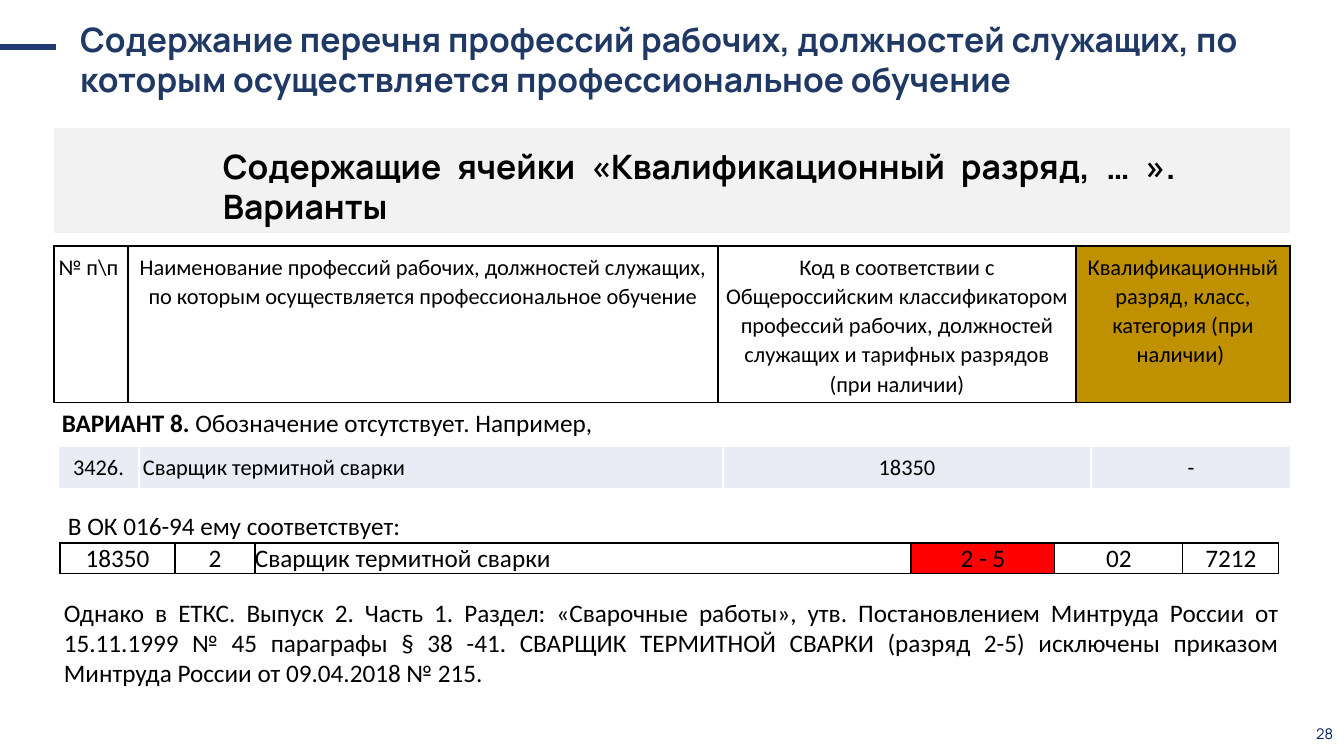
from dataclasses import dataclass

from lxml.etree import SubElement
from pptx import Presentation
from pptx.dml.color import RGBColor as RGB
from pptx.enum.shapes import MSO_CONNECTOR as CONN, MSO_SHAPE as SHAPE
from pptx.enum.text import MSO_ANCHOR as ANCHOR, MSO_AUTO_SIZE as AUTO, PP_ALIGN as AL
from pptx.oxml.ns import qn
from pptx.util import Emu, Pt


@dataclass(frozen=True)
class Theme:
    black: str = "000000"
    white: str = "FFFFFF"
    navy: str = "203864"
    number: str = "002060"
    accent: str = "213A75"
    band: str = "F2F2F2"
    gold: str = "BF9000"
    pale: str = "E9EBF5"
    red: str = "FF0000"
    head_font: str = "Manrope"
    body_font: str = "Calibri"
    head: float = 24
    body: float = 18
    cell: float = 16
    small: float = 10.5


T = Theme()

TITLE = ("Содержание перечня профессий рабочих, должностей служащих, "
         "по которым осуществляется профессиональное обучение")
SUBTITLE = "Содержащие ячейки «Квалификационный разряд, … ». Варианты"
PAGE = "28"
NOTES = [
    ((52, 387, 1235, 104), 1.5, 8,
     [("ВАРИАНТ 8.", True), (" Обозначение отсутствует. Например,", False)]),
    ((58, 490, 1233, 51), 1.5, 8, [("В ОК 016-94 ему соответствует:", False)]),
    ((54, 592, 1235, 102), 1, 0,
     [("Однако в ЕТКС. Выпуск 2. Часть 1. Раздел: «Сварочные работы», утв. "
       "Постановлением Минтруда России от 15.11.1999 № 45 параграфы § 38 -41. "
       "СВАРЩИК ТЕРМИТНОЙ СВАРКИ (разряд 2-5) исключены приказом "
       "Минтруда России от 09.04.2018 № 215. ", False)]),
]

PADDED = dict(size=T.cell, pad=(4, 7), spacing=1.06, after=8)
TIGHT = dict(size=T.body, pad=(0, 0), spacing=1, after=0)
TABLES = [
    dict(at=(54, 246), height=155, border=T.black, style=PADDED, cells=[
        (74, "№ п\\п ", AL.CENTER, None),
        (590, "Наименование профессий рабочих, должностей служащих, "
              "по которым осуществляется профессиональное обучение", AL.CENTER, None),
        (358, "Код в соответствии с Общероссийским классификатором профессий рабочих, "
              "должностей служащих и тарифных разрядов (при наличии)", AL.CENTER, None),
        (214, "Квалификационный разряд, класс, категория (при наличии) ", AL.CENTER, T.gold)]),
    dict(at=(58, 446), height=42, border=T.white, style=PADDED, cells=[
        (81, "3426.", AL.CENTER, T.pale),
        (584, "Сварщик термитной сварки", AL.LEFT, T.pale),
        (368, "18350", AL.CENTER, T.pale),
        (200, "-", AL.CENTER, T.pale)]),
    dict(at=(60, 543), height=30, border=T.black, style=TIGHT, cells=[
        (115, "18350", AL.CENTER, None),
        (80, "2", AL.CENTER, None),
        (656, "Сварщик термитной сварки", AL.LEFT, None),
        (144, "2 - 5", AL.CENTER, T.red),
        (128, "02", AL.CENTER, None),
        (96, "7212", AL.CENTER, None)]),
]


def px(n):
    return Emu(round(n * 914400 / 100.8))


def place(s, box):
    s.left, s.top, s.width, s.height = map(px, box)


def write(tf, runs, size, color=T.black, font=T.body_font, align=AL.LEFT, spacing=1, after=0):
    p = tf.paragraphs[0]
    p.alignment, p.line_spacing = align, spacing
    p.space_before, p.space_after = Pt(0), Pt(after)
    for text, bold in runs:
        r = p.add_run()
        r.text = text
        f = r.font
        f.name, f.size, f.bold = font, Pt(size), bold
        f.color.rgb = RGB.from_string(color)


def add_text(slide, box, runs, size, anchor=ANCHOR.TOP, **look):
    tf = slide.shapes.add_textbox(*map(px, box)).text_frame
    tf.word_wrap = True
    tf.vertical_anchor = anchor
    write(tf, runs, size, **look)


def add_borders(cell, color):
    tc_pr = cell._tc.get_or_add_tcPr()
    for side in ("lnL", "lnR", "lnT", "lnB"):
        ln = SubElement(tc_pr, qn(f"a:{side}"), w=str(Pt(1)))
        fill = SubElement(ln, qn("a:solidFill"))
        SubElement(fill, qn("a:srgbClr"), val=color)


def add_row_table(slide, at, height, border, style, cells):
    width = sum(c[0] for c in cells)
    box = (*at, width, height)
    table = slide.shapes.add_table(1, len(cells), *map(px, box)).table
    table.first_row = table.horz_banding = False
    for i, (col_width, text, align, fill) in enumerate(cells):
        table.columns[i].width = px(col_width)
        cell = table.cell(0, i)
        side, edge = map(px, style["pad"])
        cell.margin_left = cell.margin_right = side
        cell.margin_top = cell.margin_bottom = edge
        add_borders(cell, border)
        if fill:
            cell.fill.solid()
            cell.fill.fore_color.rgb = RGB.from_string(fill)
        else:
            cell.fill.background()
        write(cell.text_frame, [(text, False)], style["size"], align=align,
              spacing=style["spacing"], after=style["after"])


def main():
    prs = Presentation()
    prs.slide_width, prs.slide_height = px(1344), px(756)
    slide = prs.slides.add_slide(prs.slide_layouts[5])

    band = slide.shapes.add_shape(SHAPE.RECTANGLE, *map(px, (54, 128, 1236, 105)))
    band.shadow.inherit = False
    band.fill.solid()
    band.fill.fore_color.rgb = RGB.from_string(T.band)
    band.line.fill.background()
    add_text(slide, (213, 141, 973, 92), [(SUBTITLE, True)], T.head,
             font=T.head_font, align=AL.JUSTIFY)

    title = slide.shapes.title
    place(title, (70, 14, 1221, 92))
    tf = title.text_frame
    tf.word_wrap, tf.auto_size, tf.vertical_anchor = True, AUTO.NONE, ANCHOR.TOP
    write(tf, [(TITLE, True)], T.head, color=T.navy, font=T.head_font)

    add_text(slide, (1291, 714, 52, 40), [(PAGE, False)], T.small, anchor=ANCHOR.MIDDLE,
             color=T.number, font=T.head_font, align=AL.RIGHT)

    dash = slide.shapes.add_connector(CONN.STRAIGHT, *map(px, (0, 47, 56, 47)))
    dash.line.color.rgb = RGB.from_string(T.accent)
    dash.line.width = Pt(4.5)
    SubElement(dash._element.spPr, qn("a:effectLst"))

    for table in TABLES:
        add_row_table(slide, **table)
    for box, spacing, after, runs in NOTES:
        add_text(slide, box, runs, T.body, align=AL.JUSTIFY, spacing=spacing, after=after)

    prs.save("out.pptx")


if __name__ == "__main__":
    main()
